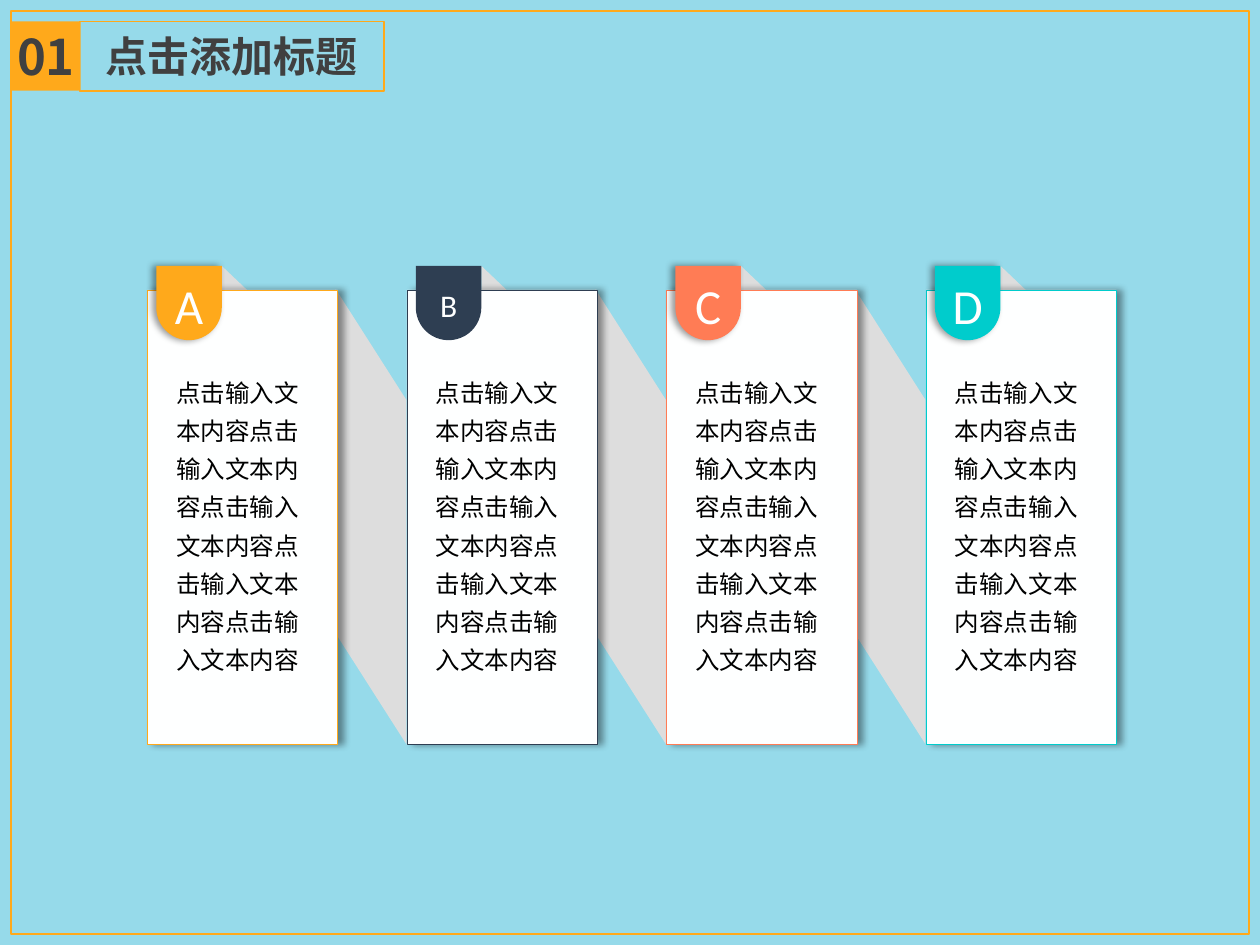
"""Build a title slide with four lettered cards linked by grey folds."""
import pptx
import pptx.dml.color
import pptx.enum.shapes
import pptx.enum.text
import pptx.oxml.ns
import pptx.util
from lxml import etree

Inches = pptx.util.Inches
Pt = pptx.util.Pt
RGB = pptx.dml.color.RGBColor.from_string
MSO = pptx.enum.shapes.MSO_SHAPE
ALIGN = pptx.enum.text.PP_ALIGN
ANCHOR = pptx.enum.text.MSO_ANCHOR
qn = pptx.oxml.ns.qn

THEME = {
    "sky": "96DAEA", "orange": "FFA91B", "navy": "2E3E52", "coral": "FF7C55",
    "teal": "00CCCC", "fold": "DDDDDD", "paper": "FEFFFF", "title": "404040",
    "body": "000000", "cjk": "Noto Sans CJK SC", "latin": "Calibri",
    "number_size": 28, "title_size": 24, "letter_size": 28,
    "small_letter_size": 18, "body_size": 14,
}


def add_shape(kind, x, y, w, h, fill=None, line=None, weight=1, shadow=None):
    sp = s.shapes.add_shape(kind, Inches(x), Inches(y), Inches(w), Inches(h))
    sp.shadow.inherit = False
    if fill:
        sp.fill.solid()
        sp.fill.fore_color.rgb = RGB(fill)
    else:
        sp.fill.background()
    if line:
        sp.line.color.rgb = RGB(line)
        sp.line.width = Pt(weight)
    else:
        sp.line.fill.background()
    if shadow:
        distance, degrees = shadow
        effects = sp._element.spPr.find(qn("a:effectLst"))
        outer = etree.SubElement(effects, qn("a:outerShdw"), blurRad=str(Pt(4)),
                                 dist=str(Pt(distance)), dir=str(degrees * 60000),
                                 algn="ctr", rotWithShape="0")
        color = etree.SubElement(outer, qn("a:srgbClr"), val="000000")
        etree.SubElement(color, qn("a:alpha"), val="40000")
    return sp


def set_text(sp, text, size, color, font=THEME["cjk"], bold=False,
             align=ALIGN.CENTER, anchor=ANCHOR.MIDDLE, spacing=None, insets=None):
    tf = sp.text_frame
    tf.word_wrap = True
    tf.vertical_anchor = anchor
    if insets:
        tf.margin_left, tf.margin_top, tf.margin_right, tf.margin_bottom = map(Inches, insets)
    p = tf.paragraphs[0]
    p.alignment = align
    if spacing:
        p.line_spacing = spacing
    r = p.add_run()
    r.text = text
    r.font.size = Pt(size)
    r.font.bold = bold
    r.font.color.rgb = RGB(color)
    r.font.name = font
    etree.SubElement(r._r.get_or_add_rPr(), qn("a:ea"), typeface=font)


prs = pptx.Presentation()
prs.slide_width, prs.slide_height = Inches(10), Inches(7.5)
s = prs.slides.add_slide(prs.slide_layouts[6])
s.background.fill.solid()
s.background.fill.fore_color.rgb = RGB(THEME["sky"])

add_shape(MSO.RECTANGLE, 0.09, 0.09, 9.82, 7.32, line=THEME["orange"])
number = add_shape(MSO.RECTANGLE, 0.09, 0.17, 0.55, 0.55, fill=THEME["orange"])
set_text(number, "01", THEME["number_size"], THEME["title"], bold=True, insets=(0, 0, 0, 0))
title = add_shape(MSO.RECTANGLE, 0.63, 0.17, 2.42, 0.55, line=THEME["orange"])
set_text(title, "点击添加标题", THEME["title_size"], THEME["title"], bold=True)

cards = [
    ("A", THEME["orange"], THEME["letter_size"], (2, 180)),
    ("B", THEME["navy"], THEME["small_letter_size"], None),
    ("C", THEME["coral"], THEME["letter_size"], (2, 180)),
    ("D", THEME["teal"], THEME["letter_size"], (2, 180)),
]
left, top, pitch, width, height = 1.17, 2.3, 2.06, 1.51, 3.61
tab_top, tab_width = 2.11, 0.52

for i, (letter, color, size, tab_shadow) in enumerate(cards):
    x = left + i * pitch
    if i < len(cards) - 1:
        fold = add_shape(MSO.PARALLELOGRAM, x - 0.03, 3.82, height, 0.56, fill=THEME["fold"])
        fold.adjustments[0] = 1.567
        fold.rotation = 270
    tab_x = x + 0.07
    add_shape(MSO.RIGHT_TRIANGLE, tab_x + tab_width, tab_top, 0.2, 0.19, fill=THEME["fold"])
    add_shape(MSO.RECTANGLE, x, top, width, height, fill=THEME["paper"],
              line=color, weight=0.25, shadow=(3, 0))
    tab = add_shape(MSO.ROUND_2_SAME_RECTANGLE, tab_x, tab_top, tab_width, 0.59,
                    fill=color, shadow=tab_shadow)
    tab.adjustments[0] = 0
    tab.adjustments[1] = 0.5
    set_text(tab, letter, size, THEME["paper"], font=THEME["latin"], insets=(0, 0.1, 0, 0))

for i in range(len(cards)):
    box = s.shapes.add_textbox(Inches(left + 0.13 + i * pitch), Inches(2.88),
                               Inches(1.25), Inches(2.55))
    set_text(box, "点击输入文本内容" * 5, THEME["body_size"], THEME["body"],
             align=ALIGN.LEFT, anchor=ANCHOR.TOP, spacing=1.3)
    box.text_frame.auto_size = pptx.enum.text.MSO_AUTO_SIZE.SHAPE_TO_FIT_TEXT

prs.save("out.pptx")
